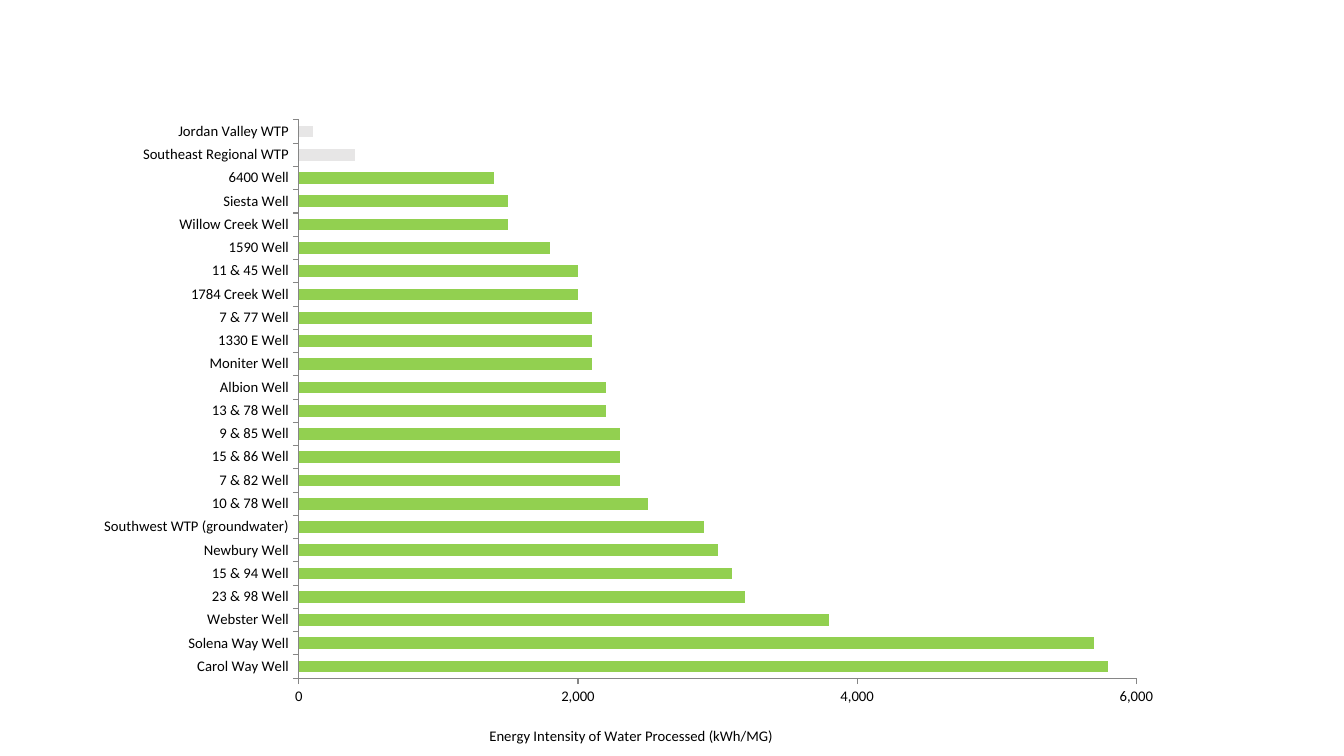
from lxml.etree import SubElement
from pptx import Presentation
from pptx.chart.data import CategoryChartData
from pptx.dml.color import RGBColor
from pptx.enum.chart import XL_CHART_TYPE as ChartType, XL_TICK_MARK as TickMark
from pptx.oxml.ns import qn
from pptx.util import Inches, Pt

BLACK = RGBColor(0x00, 0x00, 0x00)
AXIS_GRAY = RGBColor(0x86, 0x86, 0x86)
WELL_GREEN = RGBColor(0x92, 0xD0, 0x50)
SURFACE_GRAY = RGBColor(0xE7, 0xE6, 0xE6)

# Energy intensity by water source, bottom bar first
INTENSITIES = {
    "Carol Way Well": 5800,
    "Solena Way Well": 5700,
    "Webster Well": 3800,
    "23 & 98 Well": 3200,
    "15 & 94 Well": 3100,
    "Newbury Well": 3000,
    "Southwest WTP (groundwater)": 2900,
    "10 & 78 Well": 2500,
    "7 & 82 Well": 2300,
    "15 & 86 Well": 2300,
    "9 & 85 Well": 2300,
    "13 & 78 Well": 2200,
    "Albion Well": 2200,
    "Moniter Well": 2100,
    "1330 E Well": 2100,
    "7 & 77 Well": 2100,
    "1784 Creek Well": 2000,
    "11 & 45 Well": 2000,
    "1590 Well": 1800,
    "Willow Creek Well": 1500,
    "Siesta Well": 1500,
    "6400 Well": 1400,
    "Southeast Regional WTP": 400,
    "Jordan Valley WTP": 100,
}
SURFACE_PLANTS = ("Southeast Regional WTP", "Jordan Valley WTP")


class IntensitySlide:
    """Holds the chart style and the current slide."""

    font_name = "Calibri"
    font_size = Pt(10.5)

    def __init__(self, slide):
        self.slide = slide

    def style_font(self, font):
        font.name = self.font_name
        font.size = self.font_size
        font.bold = False
        font.color.rgb = BLACK

    def place(self, parent, index, **fractions):
        """Fix a chart part at fractions of the chart area."""
        for automatic in parent.findall(qn("c:layout")):
            parent.remove(automatic)
        layout = SubElement(parent, qn("c:layout"))
        parent.insert(index, layout)
        manual = SubElement(layout, qn("c:manualLayout"))
        if "w" in fractions:
            SubElement(manual, qn("c:layoutTarget")).set("val", "inner")
        for side in ("x", "y"):
            SubElement(manual, qn(f"c:{side}Mode")).set("val", "edge")
        for side, fraction in fractions.items():
            SubElement(manual, qn(f"c:{side}")).set("val", str(fraction))

    def style_axis(self, axis):
        axis.has_major_gridlines = False
        axis.major_tick_mark = TickMark.OUTSIDE
        axis.minor_tick_mark = TickMark.NONE
        axis.format.line.color.rgb = AXIS_GRAY
        axis.format.line.width = Pt(0.75)
        self.style_font(axis.tick_labels.font)

    def add_bar_chart(self, left, top, width, height, values, axis_caption):
        chart_data = CategoryChartData()
        chart_data.categories = list(values)
        chart_data.add_series("Series 1", list(values.values()))
        chart = self.slide.shapes.add_chart(
            ChartType.BAR_CLUSTERED, Inches(left), Inches(top),
            Inches(width), Inches(height), chart_data).chart
        chart.has_legend = False
        chart.has_title = False
        self.style_font(chart.font)
        plot_area = chart.element.find(f"{qn('c:chart')}/{qn('c:plotArea')}")
        self.place(plot_area, 0, x=0.198, y=0.02, w=0.767, h=0.851)

        # Bars, with the surface water plants in gray
        bars = chart.plots[0]
        bars.gap_width = 98
        bars.vary_by_categories = False
        intensity = bars.series[0]
        intensity.format.fill.solid()
        intensity.format.fill.fore_color.rgb = WELL_GREEN
        for index, source in enumerate(values):
            if source in SURFACE_PLANTS:
                plant_fill = intensity.points[index].format.fill
                plant_fill.solid()
                plant_fill.fore_color.rgb = SURFACE_GRAY

        # Axes
        scale = chart.value_axis
        for axis in (chart.category_axis, scale):
            self.style_axis(axis)
        scale.minimum_scale = 0
        scale.maximum_scale = 6000
        scale.major_unit = 2000
        scale.tick_labels.number_format = "#,##0"
        scale.tick_labels.number_format_is_linked = False

        # Axis caption
        caption = scale.axis_title
        caption.text_frame.text = axis_caption
        self.style_font(caption.text_frame.paragraphs[0].runs[0].font)
        self.place(caption.element, 1, x=0.37, y=0.94)


def main():
    deck = Presentation()
    deck.slide_width = Inches(13.33)
    deck.slide_height = Inches(7.5)
    blank_layout = deck.slide_layouts[6]
    page = IntensitySlide(deck.slides.add_slide(blank_layout))
    page.add_bar_chart(0.82, 1.06, 10.83, 6.51, INTENSITIES,
                       "Energy Intensity of Water Processed (kWh/MG)")
    deck.save("out.pptx")


if __name__ == "__main__":
    main()
